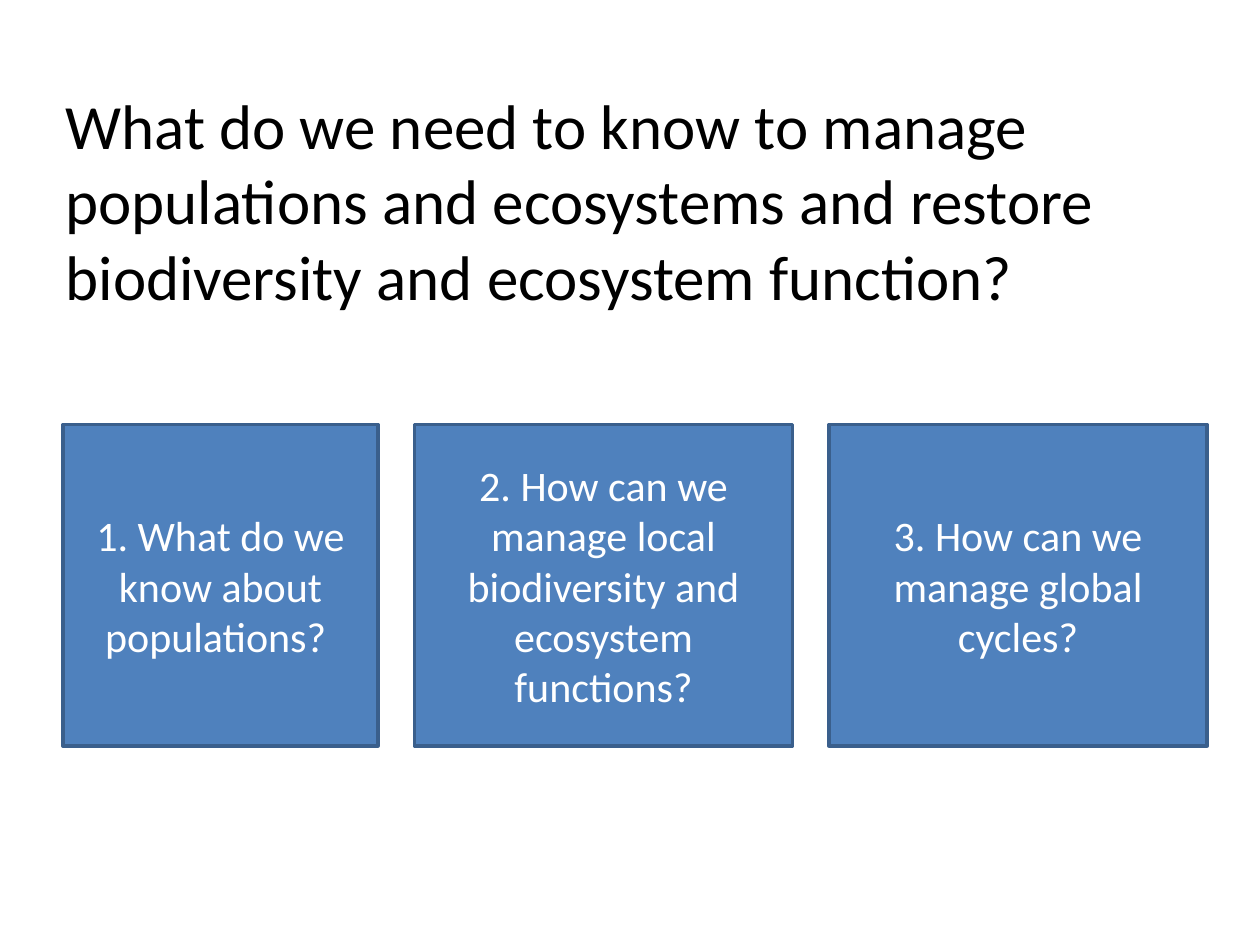
from pptx import Presentation
from pptx.dml.color import RGBColor
from pptx.enum.shapes import MSO_SHAPE
from pptx.enum.text import MSO_ANCHOR, MSO_AUTO_SIZE, PP_ALIGN
from pptx.util import Inches, Pt

COLORS = {"title": "000000", "fill": "4F81BD", "line": "3A5F8C", "text": "FFFFFF"}
FONT = "Calibri"
TITLE = ("What do we need to know to manage populations and ecosystems "
         "and restore biodiversity and ecosystem function?")
# Each question with the width of its box in inches
QUESTIONS = [
    ("1. What do we know about populations? ", 2.5),
    ("2. How can we manage local biodiversity and ecosystem functions?", 3),
    ("3. How can we manage global cycles?", 3),
]
GAP = 0.29


def color(name):
    return RGBColor.from_string(COLORS[name])


def write_text(shape, text, size, color_name, alignment):
    frame = shape.text_frame
    frame.text = text
    frame.word_wrap = True
    frame.auto_size = MSO_AUTO_SIZE.NONE
    frame.vertical_anchor = MSO_ANCHOR.MIDDLE
    para = frame.paragraphs[0]
    para.alignment = alignment
    para.font.name = FONT
    para.font.size = Pt(size)
    para.font.color.rgb = color(color_name)


def place_title(page, left, top, width, height):
    title = page.shapes.title
    title.left, title.top = Inches(left), Inches(top)
    title.width, title.height = Inches(width), Inches(height)
    write_text(title, TITLE, 36, "title", PP_ALIGN.LEFT)


def add_questions(page, left, top, height):
    for question, width in QUESTIONS:
        box = page.shapes.add_shape(
            MSO_SHAPE.FLOWCHART_PROCESS,
            Inches(left), Inches(top), Inches(width), Inches(height))
        box.shadow.inherit = False
        box.fill.solid()
        box.fill.fore_color.rgb = color("fill")
        box.line.color.rgb = color("line")
        box.line.width = Pt(2)
        write_text(box, question, 24, "text", PP_ALIGN.CENTER)
        left += width + GAP


def main():
    deck = Presentation()
    deck.slide_width, deck.slide_height = Inches(10), Inches(7.5)
    page = deck.slides.add_slide(deck.slide_layouts.get_by_name("Title Only"))

    # Leading question
    place_title(page, 0.42, 0.5, 9, 2.17)

    # Row of three sub-questions
    add_questions(page, 0.5, 3.37, 2.55)

    deck.save("out.pptx")


if __name__ == "__main__":
    main()
